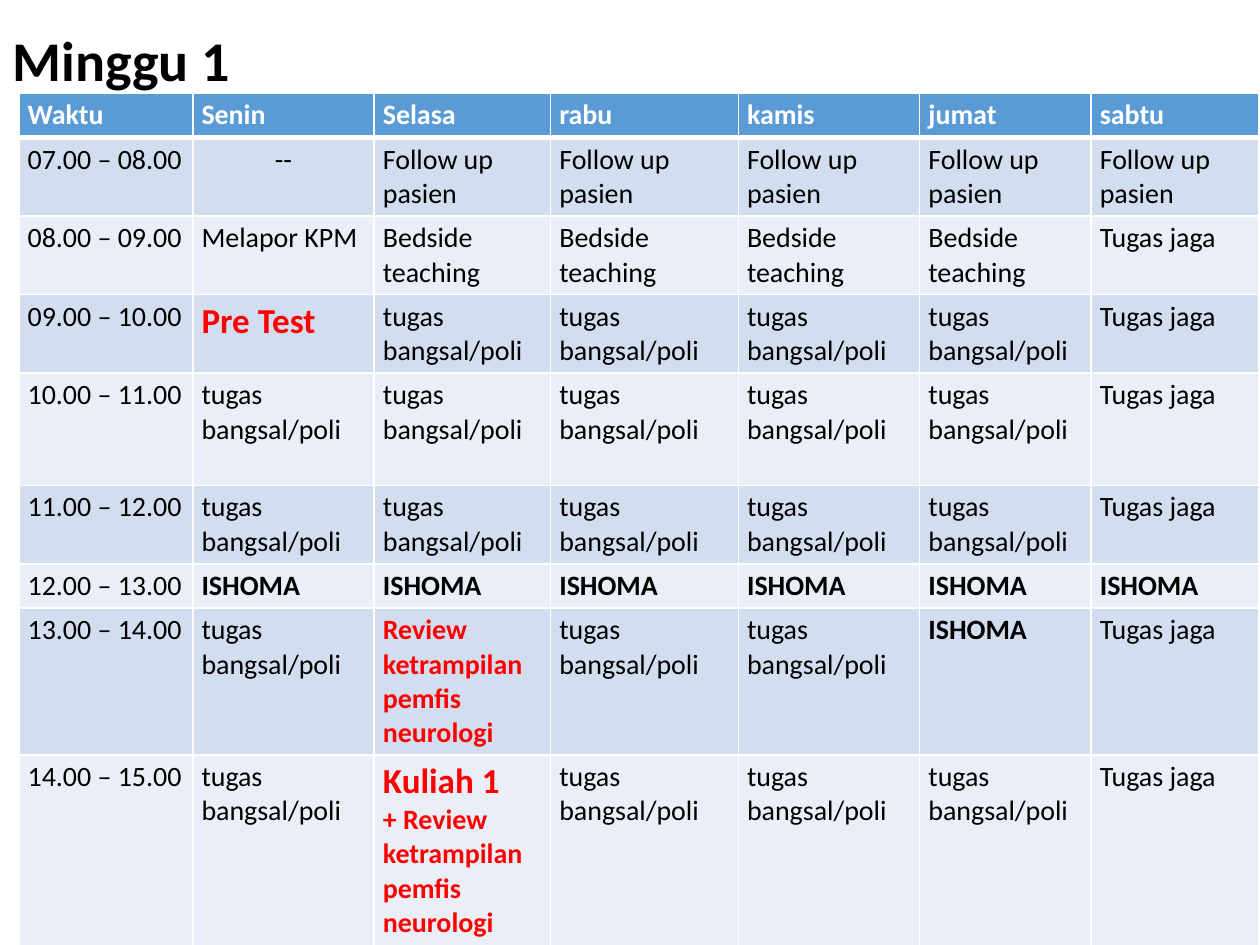
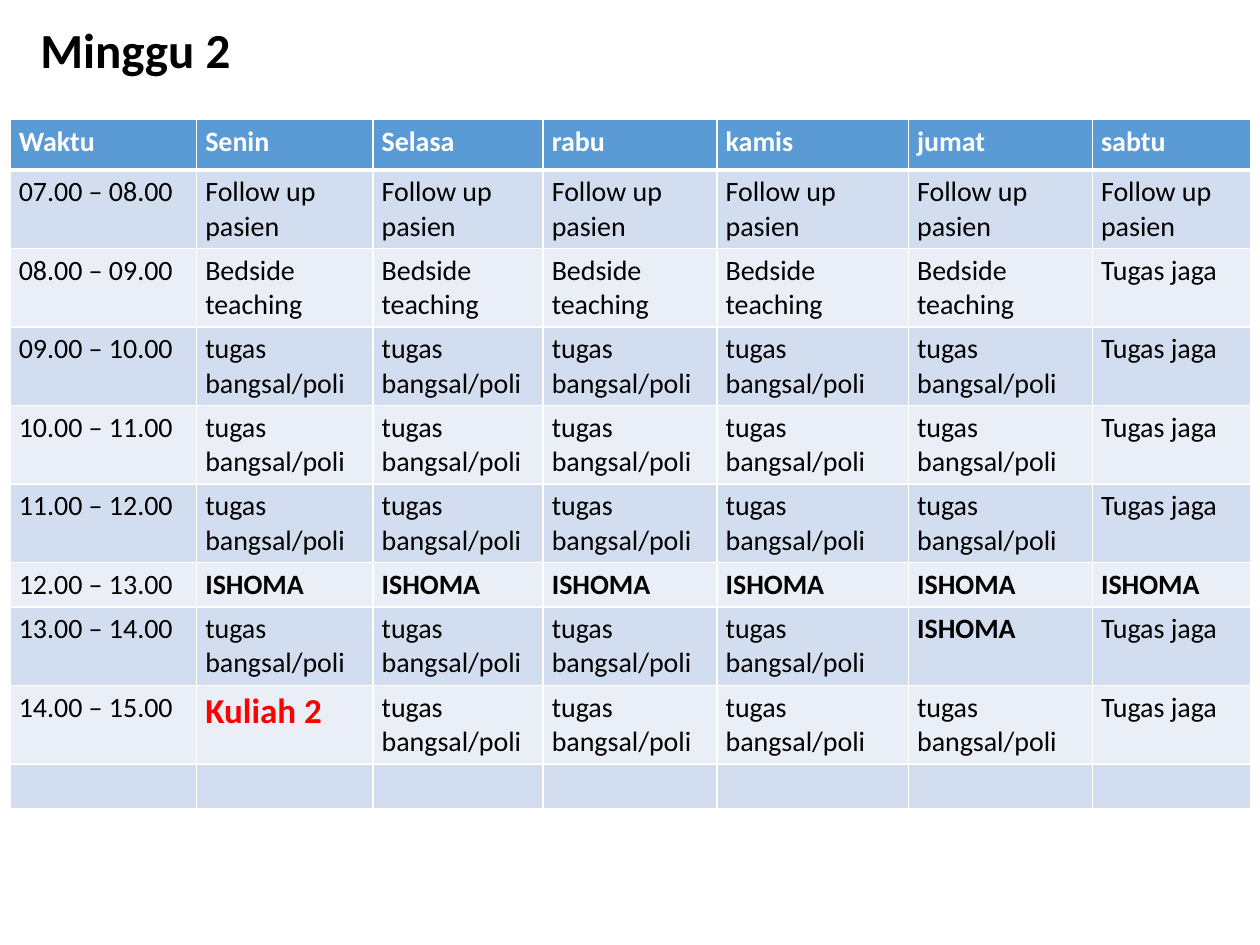
from lxml import etree
from pptx import Presentation
from pptx import util as u
from pptx.dml.color import RGBColor
from pptx.enum import text
from pptx.oxml.ns import qn

COLORS = {"header": "5B9BD5", "band": "D2DEEF", "light": "EAEFF7",
          "white": "FFFFFF", "black": "000000", "red": "FF0000"}
FONT = "Calibri"
BODY_SIZE = 16
DAYS = ["Waktu", "Senin", "Selasa", "rabu", "kamis", "jumat", "sabtu"]
FOLLOW_UP, BEDSIDE, WARD = "Follow up pasien", "Bedside teaching", "tugas bangsal/poli"
DUTY, BREAK = "Tugas jaga", "ISHOMA"
REVIEW = "Review ketrampilan pemfis neurologi"
HIGHLIGHT_SIZES = {"Pre Test": 20, "Kuliah 1": 20, "Kuliah 2": 20,
                   REVIEW: BODY_SIZE, "+ " + REVIEW: BODY_SIZE}

common_week = [
    ["07.00 – 08.00"] + [FOLLOW_UP] * 6,
    ["08.00 – 09.00"] + [BEDSIDE] * 5 + [DUTY],
    ["09.00 – 10.00"] + [WARD] * 5 + [DUTY],
    ["10.00 – 11.00"] + [WARD] * 5 + [DUTY],
    ["11.00 – 12.00"] + [WARD] * 5 + [DUTY],
    ["12.00 – 13.00"] + [BREAK] * 6,
    ["13.00 – 14.00"] + [WARD] * 4 + [BREAK, DUTY],
    ["14.00 – 15.00"] + [WARD] * 5 + [DUTY],
]

weeks = [
    {"title": "Minggu 1", "title_box": (0, 0.36, 8.62, 0.29), "title_size": 32,
     "table_at": (0.15, 0.74),
     "columns": [1.38, 1.44, 1.4, 1.49, 1.44, 1.36, 1.33],
     "rows": [0.35, 0.62, 0.62, 0.62, 0.89, 0.62, 0.35, 1.16, 1.54],
     "changes": {(1, 1): "--", (2, 1): "Melapor KPM", (3, 1): "Pre Test",
                 (7, 2): REVIEW, (8, 2): "Kuliah 1\n+ " + REVIEW},
     "empty_rows": 0},
    {"title": "Minggu 2", "title_box": (0.22, 0.21, 8.62, 0.41), "title_size": 28,
     "table_at": (0.08, 0.95),
     "columns": [1.48, 1.4, 1.35, 1.38, 1.52, 1.46, 1.26],
     "rows": [0.4] + [0.62] * 5 + [0.35] + [0.62] * 2 + [0.35],
     "changes": {(8, 1): "Kuliah 2"},
     "empty_rows": 1},
]


def add_run(paragraph, words, size, color, bold):
    run = paragraph.add_run()
    run.text = words
    run.font.name = FONT
    run.font.size = u.Pt(size)
    run.font.bold = bold
    run.font.color.rgb = RGBColor.from_string(COLORS[color])


def format_cell(cell, fill, top, bottom):
    cell.margin_left = cell.margin_right = u.Inches(0.07)
    cell.margin_top = cell.margin_bottom = u.Inches(0.04)
    properties = cell._tc.get_or_add_tcPr()
    for side, width in (("L", 1), ("R", 1), ("T", top), ("B", bottom)):
        line = etree.SubElement(properties, qn("a:ln" + side), w=str(u.Pt(width)))
        solid = etree.SubElement(line, qn("a:solidFill"))
        etree.SubElement(solid, qn("a:srgbClr"), val=COLORS["white"])
    cell.fill.solid()
    cell.fill.fore_color.rgb = RGBColor.from_string(COLORS[fill])


presentation = Presentation()
presentation.slide_width = u.Inches(10)
presentation.slide_height = u.Inches(7.5)

for week in weeks:
    slide = presentation.slides.add_slide(presentation.slide_layouts[5])
    title = slide.shapes.title
    title.left, title.top, title.width, title.height = map(u.Inches, week["title_box"])
    title.text_frame.auto_size = text.MSO_AUTO_SIZE.NONE
    title.text_frame.vertical_anchor = text.MSO_ANCHOR.MIDDLE
    paragraph = title.text_frame.paragraphs[0]
    paragraph.alignment = text.PP_ALIGN.LEFT
    paragraph.line_spacing = 0.9
    add_run(paragraph, week["title"], week["title_size"], "black", True)

    schedule = [DAYS] + common_week + [[""] * len(DAYS)] * week["empty_rows"]
    left, top = week["table_at"]
    table = slide.shapes.add_table(
        len(schedule), len(DAYS), u.Inches(left), u.Inches(top),
        u.Inches(sum(week["columns"])), u.Inches(sum(week["rows"]))).table
    for column, width in zip(table.columns, week["columns"]):
        column.width = u.Inches(width)
    for row, height in zip(table.rows, week["rows"]):
        row.height = u.Inches(height)

    for row_index, activities in enumerate(schedule):
        is_header = row_index == 0
        fill = "header" if is_header else "band" if row_index % 2 else "light"
        for column_index, usual in enumerate(activities):
            cell = table.cell(row_index, column_index)
            format_cell(cell, fill, 3 if row_index == 1 else 1, 3 if is_header else 1)
            activity = week["changes"].get((row_index, column_index), usual)
            for line_index, words in enumerate(activity.split("\n")):
                frame = cell.text_frame
                paragraph = frame.add_paragraph() if line_index else frame.paragraphs[0]
                if not words:
                    etree.SubElement(paragraph._p, qn("a:endParaRPr"), sz=str(BODY_SIZE * 100))
                    continue
                if words == "--":
                    paragraph.alignment = text.PP_ALIGN.CENTER
                highlighted = words in HIGHLIGHT_SIZES
                color = "white" if is_header else "red" if highlighted else "black"
                add_run(paragraph, words, HIGHLIGHT_SIZES.get(words, BODY_SIZE), color,
                        is_header or highlighted or words == BREAK)

presentation.save("out.pptx")
